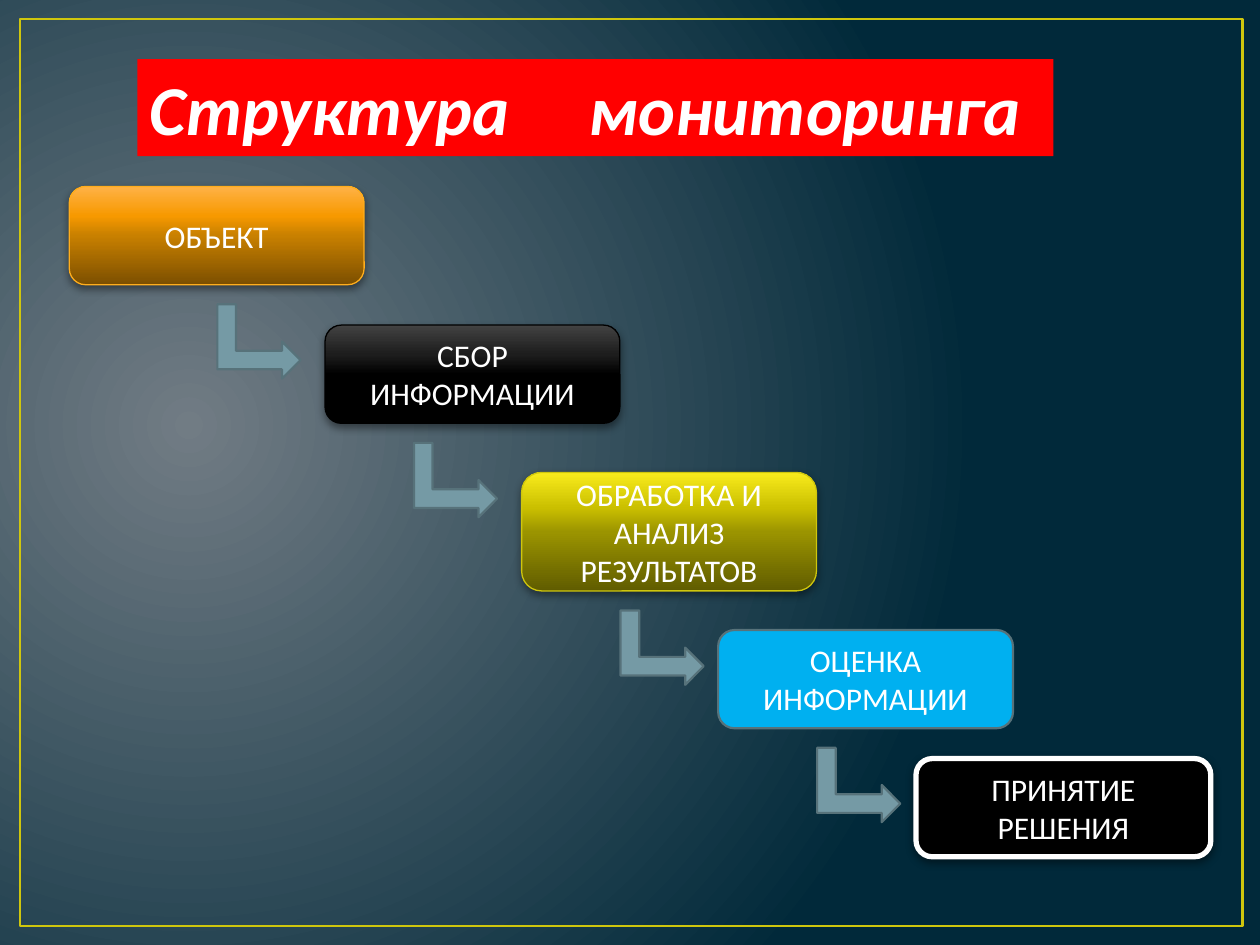
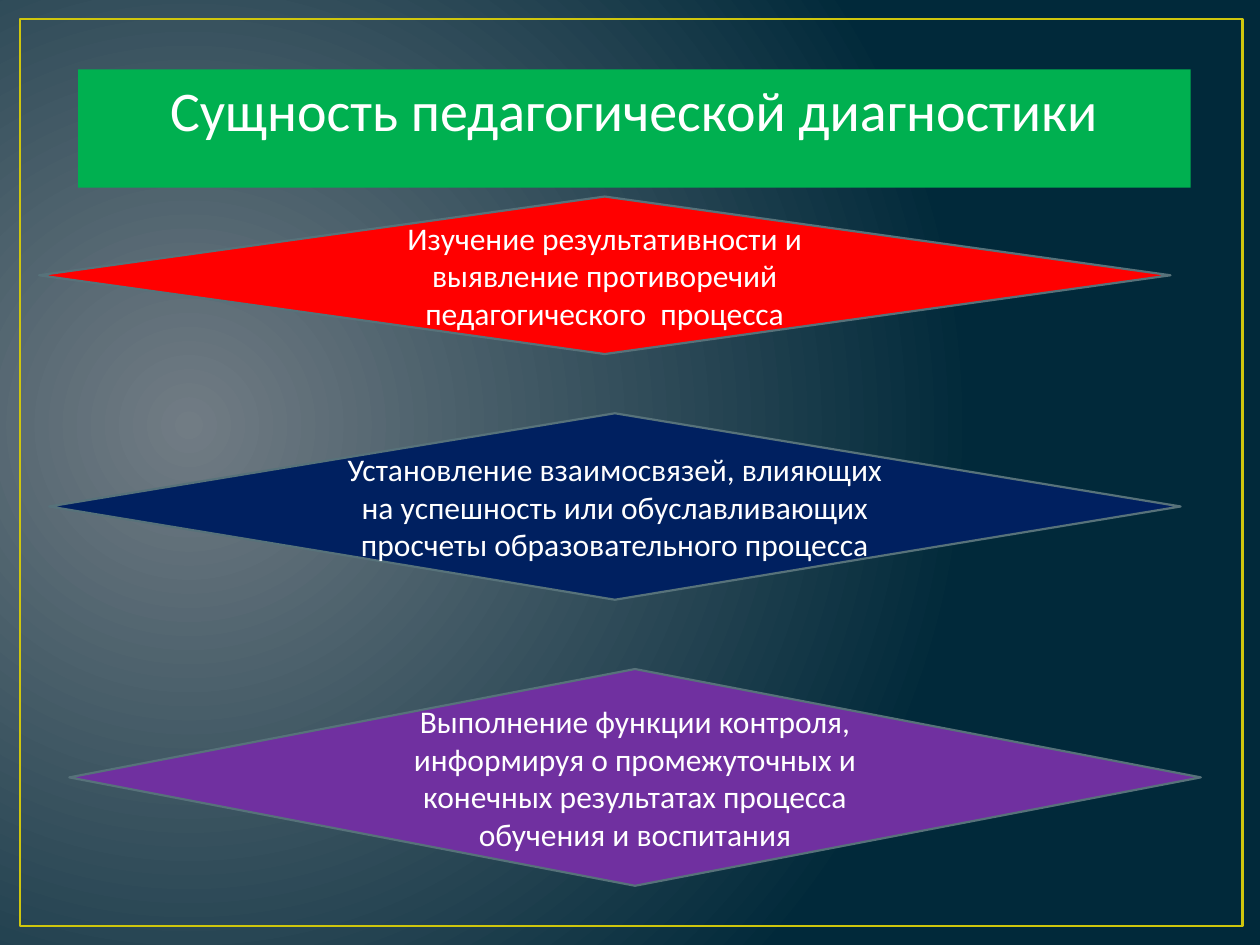
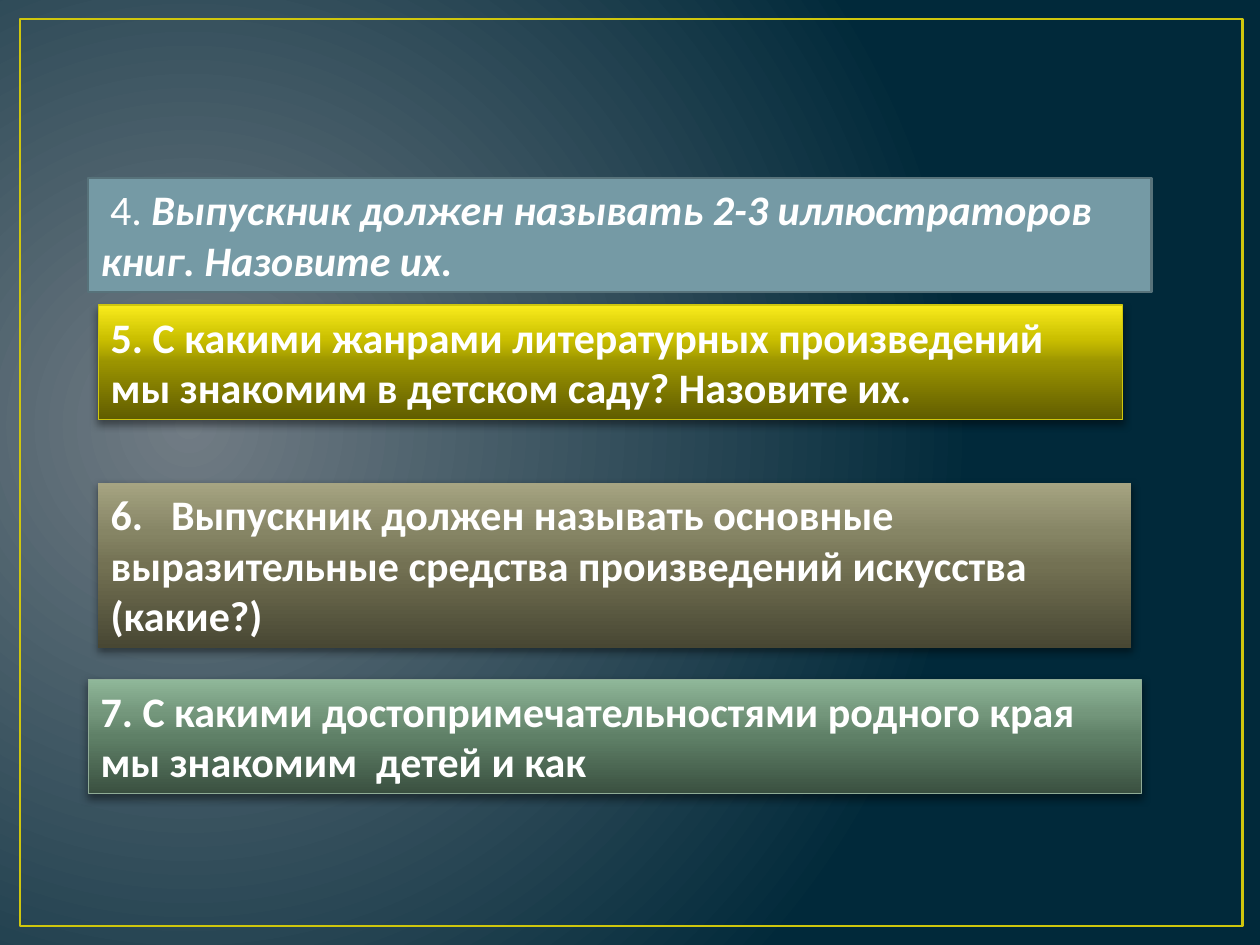
from dataclasses import dataclass

from lxml.etree import SubElement
from pptx import Presentation
from pptx.dml.color import RGBColor
from pptx.enum.shapes import MSO_SHAPE as Preset
from pptx.enum.text import MSO_ANCHOR as Anchor, MSO_AUTO_SIZE as AutoSize, PP_ALIGN as Align
from pptx.oxml import parse_xml
from pptx.oxml.ns import nsdecls, qn
from pptx.util import Inches, Pt


@dataclass(frozen=True)
class Theme:
    font: str = "Calibri"
    white: str = "FFFFFF"
    black: str = "000000"
    red: str = "FF0000"
    green: str = "00B050"
    sky: str = "00B0F0"
    navy: str = "002060"
    violet: str = "7030A0"
    steel: str = "759AA5"
    edge: str = "57727A"
    gold: str = "CFC60D"
    amber: str = "FFAD1C"
    sage: str = "90AC97"
    backdrop: tuple = ("717C84", "01293A")
    orange_fade: tuple = ("7C4F00", "C88000", "F79900", "FFB246")
    black_fade: tuple = ("000000", "000000", "1D1D1D", "424242")
    yellow_fade: tuple = ("605C00", "9B9400", "CABF00", "F9EC1C")
    olive_fade: tuple = ("484733", "737153", "868565", "A6A482")
    green_fade: tuple = ("3A5040", "5F8067", "73967B", "90B89A")
    title_size: int = 40
    heading_size: int = 32
    question_size: int = 24
    label_size: int = 18


theme = Theme()
FADE_STOPS = (0, 50, 70, 100)
UPWARD = '<a:lin ang="16200000" scaled="0"/>'
RADIAL = '<a:path path="circle"><a:fillToRect l="15000" t="50000" r="85000" b="60000"/></a:path>'
THIN, OUTLINE, FRAME, THICK = 0.75, 1.25, 1.5, 3

FRAME_AT = (0.16, 0.15, 9.7, 7.2)
STEP_WIDTH, STEP_HEIGHT = 2.34, 0.78
ARROW_WIDTH, ARROW_HEIGHT, ARROW_DROP = 0.59, 0.66, 0.12
DIAMOND_WIDTH = 8.98

STRUCTURE = {"text": "Структура\tмониторинга", "at": (1.09, 0.47, 7.27, 0.77)}
STEPS = [
    {"text": "ОБЪЕКТ", "corner": (0.55, 1.48),
     "look": {"fill": theme.orange_fade, "line": (theme.amber, THIN), "shadow": True}},
    {"text": "СБОР ИНФОРМАЦИИ", "corner": (2.58, 2.58), "lead": 0.82,
     "look": {"fill": theme.black_fade, "line": (theme.black, THIN), "shadow": True}},
    {"text": "ОБРАБОТКА И АНАЛИЗ РЕЗУЛЬТАТОВ", "corner": (4.14, 3.75), "lead": 0.82, "height": 0.94,
     "look": {"fill": theme.yellow_fade, "line": (theme.gold, THIN), "shadow": True}},
    {"text": "ОЦЕНКА ИНФОРМАЦИИ", "corner": (5.7, 5), "lead": 0.74,
     "look": {"fill": theme.sky, "line": (theme.edge, OUTLINE)}},
    {"text": "ПРИНЯТИЕ РЕШЕНИЯ", "corner": (7.27, 6.02), "lead": 0.75,
     "look": {"fill": theme.black, "line": (theme.white, THICK), "shadow": True}},
]

ESSENCE = {"text": "Сущность педагогической диагностики", "at": (0.62, 0.55, 8.83, 0.94)}
DIAMONDS = [
    ("Изучение результативности и выявление противоречий педагогического  процесса",
     theme.red, 0.31, 1.56, 1.25),
    ("Установление взаимосвязей, влияющих на успешность или обуславливающих "
     "просчеты образовательного процесса",
     theme.navy, 0.39, 3.28, 1.48),
    ("Выполнение функции контроля, информируя о промежуточных и конечных "
     "результатах процесса обучения и воспитания",
     theme.violet, 0.55, 5.31, 1.72),
]

QUESTIONS = [
    {"spans": [(" 4. ", {}),
               ("Выпускник должен называть 2-3 иллюстраторов книг. Назовите их.",
                {"bold": True, "italic": True})],
     "at": (0.7, 1.41, 8.44, 0.91),
     "look": {"fill": theme.steel, "line": (theme.edge, OUTLINE)}},
    {"spans": [("5. С какими жанрами литературных произведений мы знакомим "
                "в детском саду? Назовите их.", {"bold": True})],
     "at": (0.78, 2.42, 8.13, 0.91),
     "look": {"fill": theme.yellow_fade, "line": (theme.gold, THIN), "shadow": True}},
    {"spans": [("6.\tВыпускник должен называть основные выразительные средства "
                "произведений искусства (какие?)", {"bold": True})],
     "at": (0.78, 3.83, 8.2, 1.31), "tab": 0.48,
     "look": {"fill": theme.olive_fade, "shadow": True}},
    {"spans": [("7. С какими достопримечательностями родного края мы знакомим  детей и как",
                {"bold": True})],
     "at": (0.7, 5.39, 8.36, 0.91),
     "look": {"fill": theme.green_fade, "line": (theme.sage, THIN), "shadow": True}},
]


def set_gradient(fill, holder, colours, stops, direction):
    fill.gradient()
    marks = "".join(
        f'<a:gs pos="{stop * 1000}"><a:srgbClr val="{colour}"/></a:gs>'
        for stop, colour in zip(stops, colours))
    gradient = parse_xml(
        f'<a:gradFill {nsdecls("a")} rotWithShape="1"><a:gsLst>{marks}</a:gsLst>{direction}</a:gradFill>')
    holder.replace(holder.find(qn("a:gradFill")), gradient)


def style(shape, fill=None, line=None, shadow=False):
    properties = shape.element.spPr
    if fill is None:
        shape.fill.background()
    elif isinstance(fill, tuple):
        set_gradient(shape.fill, properties, fill, FADE_STOPS, UPWARD)
    else:
        shape.fill.solid()
        shape.fill.fore_color.rgb = RGBColor.from_string(fill)
    if line:
        colour, width = line
        shape.line.color.rgb = RGBColor.from_string(colour)
        shape.line.width = Pt(width)
    else:
        shape.line.fill.background()
    shape.shadow.inherit = False
    if shadow:
        properties.find(qn("a:effectLst")).append(parse_xml(
            f'<a:outerShdw {nsdecls("a")} blurRad="{Pt(5)}" dist="{Pt(2)}" dir="5400000" rotWithShape="0">'
            f'<a:srgbClr val="{theme.black}"><a:alpha val="43000"/></a:srgbClr></a:outerShdw>'))


def write(shape, text, size=theme.label_size, align=Align.CENTER, anchor=Anchor.MIDDLE,
          tab=None, bold=False, italic=False):
    spans = [(text, {"bold": bold, "italic": italic})] if isinstance(text, str) else text
    frame = shape.text_frame
    frame.word_wrap = True
    frame.auto_size = AutoSize.NONE
    frame.vertical_anchor = anchor
    para = frame.paragraphs[0]
    para.alignment = align
    if tab:
        tabs = SubElement(para._p.get_or_add_pPr(), qn("a:tabLst"))
        SubElement(tabs, qn("a:tab"), pos=str(Inches(tab)), algn="l")
    for words, emphasis in spans:
        span = para.add_run()
        span.text = words
        span.font.name = theme.font
        span.font.size = Pt(size)
        span.font.color.rgb = RGBColor.from_string(theme.white)
        span.font.bold = emphasis.get("bold", False)
        span.font.italic = emphasis.get("italic", False)


def add_box(page, preset, at, **look):
    box = page.shapes.add_shape(preset, *map(Inches, at))
    style(box, **look)
    return box


def add_title(page, text, at, fill, **text_format):
    title = page.shapes.title
    title.left, title.top, title.width, title.height = map(Inches, at)
    style(title, fill=fill)
    write(title, text, anchor=Anchor.TOP, **text_format)


def dress_master(master, page):
    content = master.element.cSld
    fill = master.background.fill
    set_gradient(fill, content.bg.bgPr, theme.backdrop, (0, 100), RADIAL)
    frame = add_box(page, Preset.RECTANGLE, FRAME_AT, line=(theme.gold, FRAME))
    content.spTree.insert(2, frame.element)


def draw_structure(page):
    add_title(page, **STRUCTURE, fill=theme.red, size=theme.title_size,
              align=Align.LEFT, tab=3.48, bold=True, italic=True)
    bottom = 0
    for step in STEPS:
        left, top = step["corner"]
        height = step.get("height", STEP_HEIGHT)
        box = add_box(page, Preset.ROUNDED_RECTANGLE, (left, top, STEP_WIDTH, height), **step["look"])
        write(box, step["text"])
        if "lead" in step:
            arrow_at = (left - step["lead"], bottom + ARROW_DROP, ARROW_WIDTH, ARROW_HEIGHT)
            arrow = add_box(page, Preset.BENT_UP_ARROW, arrow_at,
                            fill=theme.steel, line=(theme.edge, OUTLINE))
            arrow.rotation = 90
        bottom = top + height


def draw_essence(page):
    add_title(page, **ESSENCE, fill=theme.green, size=theme.heading_size)
    for text, colour, left, top, height in DIAMONDS:
        diamond = add_box(page, Preset.FLOWCHART_DECISION, (left, top, DIAMOND_WIDTH, height),
                          fill=colour, line=(theme.edge, OUTLINE))
        write(diamond, text)


def draw_questions(page):
    for question in QUESTIONS:
        box = add_box(page, Preset.RECTANGLE, question["at"], **question["look"])
        write(box, question["spans"], size=theme.question_size, align=Align.LEFT,
              anchor=Anchor.TOP, tab=question.get("tab"))


def main():
    deck = Presentation()
    deck.slide_width, deck.slide_height = Inches(10), Inches(7.5)
    title_only, blank = deck.slide_layouts[5], deck.slide_layouts[6]
    plan = [(title_only, draw_structure), (title_only, draw_essence), (blank, draw_questions)]
    for layout, draw in plan:
        draw(deck.slides.add_slide(layout))
    dress_master(deck.slide_master, deck.slides[0])
    deck.save("out.pptx")


if __name__ == "__main__":
    main()
